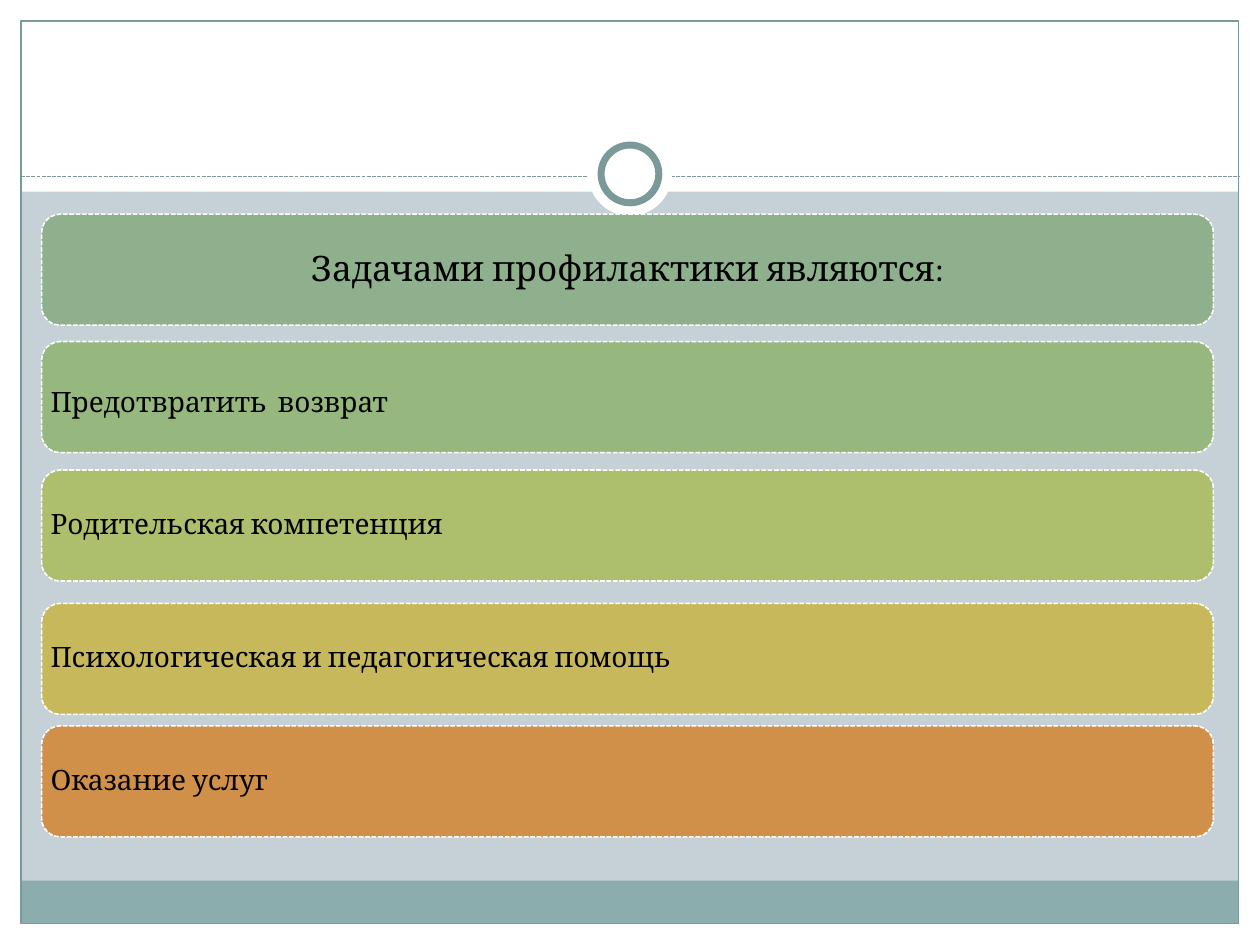
from pptx import Presentation
from pptx.util import Pt
from pptx.dml.color import RGBColor
from pptx.enum.dml import MSO_LINE
from pptx.enum.shapes import MSO_CONNECTOR, MSO_SHAPE
from pptx.enum.text import MSO_ANCHOR, PP_ALIGN
from lxml.etree import SubElement
from pptx.oxml.ns import qn

HUES = {
    "back": "C5D1D7", "white": "FFFFFF", "black": "000000",
    "foot": "8CADAE", "edge": "7C999A", "sage": "8FB08C",
    "green": "96B77D", "lime": "ADBF6C", "gold": "C7B95B",
    "orange": "D19049",
}
ROWS = [
    (122.4, "sage", [("Задачами профилактики являются:", 20)]),
    (195.2, "green", [("Предотвратить", 16), (" ", 28), ("возврат", 16)]),
    (268.6, "lime", [("Родительская компетенция", 16)]),
    (344.8, "gold", [("Психологическая и педагогическая помощь", 16)]),
    (414.8, "orange", [("Оказание услуг", 16)]),
]
WIDE, HIGH, RIM = 720, 540, 12.1
BAR_X, BAR_W, BAR_H = 23.8, 669.6, 63.4
RULE_Y, RING_Y = 100.8, 99.4


def color(name):
    return RGBColor.from_string(HUES[name])


def stroke(line, hue, width, dash=None):
    line.color.rgb = color(hue)
    line.width = Pt(width)
    if dash:
        line.dash_style = dash


def draw(kind, x, y, w, h, fill=None, line=None):
    shape = slide.shapes.add_shape(kind, Pt(x), Pt(y), Pt(w), Pt(h))
    shape.shadow.inherit = False
    if fill:
        shape.fill.solid()
        shape.fill.fore_color.rgb = color(fill)
    else:
        shape.fill.background()
    if line:
        stroke(shape.line, *line)
    else:
        shape.line.fill.background()
    return shape


def disc(size, line=None):
    draw(MSO_SHAPE.OVAL, (WIDE - size) / 2, RING_Y - size / 2,
         size, size, "white", line)


def write(shape, runs, align, inset):
    frame = shape.text_frame
    frame.word_wrap = True
    frame.vertical_anchor = MSO_ANCHOR.MIDDLE
    frame.margin_left = frame.margin_right = Pt(inset)
    frame.margin_top = frame.margin_bottom = Pt(inset)
    para = frame.paragraphs[0]
    para.alignment = align
    para.line_spacing = 0.9
    for text, size in runs:
        run = para.add_run()
        run.text = text
        run.font.name = "Cambria"
        run.font.size = Pt(size)
        run.font.color.rgb = color("black")


deck = Presentation()
deck.slide_width, deck.slide_height = Pt(WIDE), Pt(HIGH)
slide = deck.slides.add_slide(deck.slide_layouts[6])
slide.background.fill.solid()
slide.background.fill.fore_color.rgb = color("back")

inner_w, inner_h = WIDE - 2 * RIM, HIGH - 2 * RIM
for box in [
    (0, HIGH - RIM, WIDE, RIM),
    (0, 0, WIDE, 109.6),
    (0, 0, RIM, HIGH),
    (WIDE - RIM, 0, RIM, HIGH),
]:
    draw(MSO_SHAPE.RECTANGLE, *box, "white")
draw(MSO_SHAPE.RECTANGLE, RIM, 503.2, inner_w, 24.6, "foot")
draw(MSO_SHAPE.RECTANGLE, RIM, RIM, inner_w, inner_h, line=("edge", 0.75))

rule = slide.shapes.add_connector(
    MSO_CONNECTOR.STRAIGHT, Pt(RIM), Pt(RULE_Y), Pt(WIDE - RIM), Pt(RULE_Y))
stroke(rule.line, "edge", 0.75, MSO_LINE.SQUARE_DOT)
SubElement(rule._element.spPr, qn("a:effectLst"))
disc(48)
disc(33, ("edge", 4))

for i, (top, fill, runs) in enumerate(ROWS):
    bar = draw(MSO_SHAPE.ROUNDED_RECTANGLE, BAR_X, top, BAR_W, BAR_H,
               fill, ("white", 0.9, MSO_LINE.SQUARE_DOT))
    write(bar, runs, PP_ALIGN.LEFT if i else PP_ALIGN.CENTER, 2)

deck.save("out.pptx")
